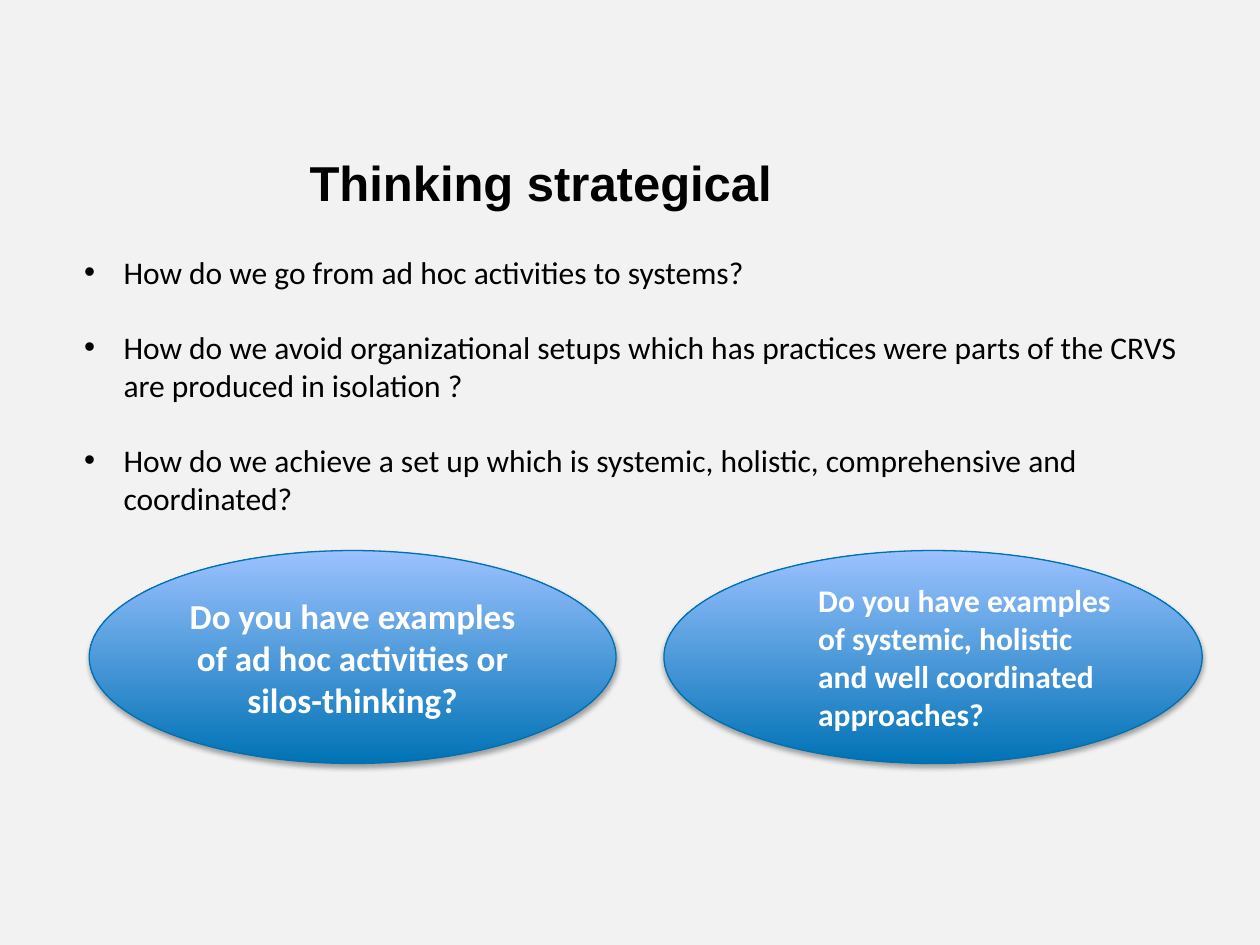
from dataclasses import dataclass

from lxml.etree import SubElement
from pptx import Presentation
from pptx.dml.color import RGBColor
from pptx.enum.shapes import MSO_SHAPE
from pptx.enum.text import MSO_ANCHOR, PP_ALIGN
from pptx.oxml.ns import qn
from pptx.util import Pt


@dataclass(frozen=True)
class Theme:
    background: RGBColor = RGBColor(0xF2, 0xF2, 0xF2)
    ink: RGBColor = RGBColor(0, 0, 0)
    light: RGBColor = RGBColor(0xFF, 0xFF, 0xFF)
    outline: RGBColor = RGBColor(0x00, 0x70, 0xB1)
    gradient: tuple = (RGBColor(0x00, 0x73, 0xB5), RGBColor(0x9C, 0xC1, 0xFF))
    heading_font: str = "Arial"
    body_font: str = "Calibri"
    title_size: int = 28
    prompt_size: int = 20
    body_size: int = 18


theme = Theme()


def add_run(paragraph, text, size, color, bold=False, font=theme.body_font):
    run = paragraph.add_run()
    run.text = text
    run.font.name = font
    run.font.size = Pt(size)
    run.font.bold = bold
    run.font.color.rgb = color


def add_soft_shadow(shape):
    effects = SubElement(shape.element.spPr, qn("a:effectLst"))
    shadow = SubElement(effects, qn("a:outerShdw"), blurRad=str(Pt(3.1)),
                        dist=str(Pt(1.8)), dir="5400000", rotWithShape="0")
    black = SubElement(shadow, qn("a:srgbClr"), val="000000")
    SubElement(black, qn("a:alpha"), val="35000")


presentation = Presentation()
presentation.slide_width, presentation.slide_height = Pt(720), Pt(540)
slide = presentation.slides.add_slide(presentation.slide_layouts[5])
slide.background.fill.solid()
slide.background.fill.fore_color.rgb = theme.background

title = slide.shapes.title
title.left, title.top, title.width, title.height = Pt(0), Pt(46), Pt(618), Pt(116)
title.text_frame.vertical_anchor = MSO_ANCHOR.MIDDLE
heading = title.text_frame.paragraphs[0]
heading.alignment = PP_ALIGN.CENTER
add_run(heading, "Thinking strategical", theme.title_size, theme.ink, True, theme.heading_font)

# Bulleted questions
questions = [
    "How do we go from ad hoc activities to systems?",
    "How do we avoid organizational setups which has practices were parts of the CRVS "
    "are produced in isolation ?",
    "How do we achieve a set up which is systemic, holistic, comprehensive and coordinated?",
]
question_list = slide.shapes.add_textbox(Pt(41), Pt(140.8), Pt(646.6), Pt(161)).text_frame
question_list.word_wrap = True
for index, question in enumerate(questions):
    item = question_list.add_paragraph() if index else question_list.paragraphs[0]
    properties = item._p.get_or_add_pPr()
    properties.set("marL", str(Pt(22.5)))
    properties.set("indent", str(Pt(-22.5)))
    SubElement(properties, qn("a:buFont"), typeface=theme.heading_font)
    SubElement(properties, qn("a:buChar"), char="•")
    if index:
        item.space_before = Pt(21.5)
    add_run(item, question, theme.body_size, theme.ink)

# Discussion prompts: left, width, text, size, alignment, level, left margin
prompts = [
    (51, 301, "Do you have examples of ad hoc activities or silos-thinking?",
     theme.prompt_size, PP_ALIGN.CENTER, 0, 0),
    (379.4, 307.6, "Do you have examples of systemic, holistic and well coordinated approaches?",
     theme.body_size, PP_ALIGN.LEFT, 1, 36),
]
for left, width, text, size, alignment, level, margin in prompts:
    prompt = slide.shapes.add_shape(MSO_SHAPE.OVAL, Pt(left), Pt(314.6), Pt(width), Pt(121.7))
    prompt.fill.gradient()
    prompt.fill.gradient_angle = 90
    for stop, color in zip(prompt.fill.gradient_stops, theme.gradient):
        stop.color.rgb = color
    prompt.line.color.rgb = theme.outline
    prompt.line.width = Pt(0.75)
    add_soft_shadow(prompt)
    prompt.text_frame.word_wrap = True
    prompt.text_frame.vertical_anchor = MSO_ANCHOR.MIDDLE
    paragraph = prompt.text_frame.paragraphs[0]
    paragraph.alignment = alignment
    paragraph.level = level
    paragraph._p.get_or_add_pPr().set("marL", str(Pt(margin)))
    add_run(paragraph, text, size, theme.light, True)

presentation.save("out.pptx")
